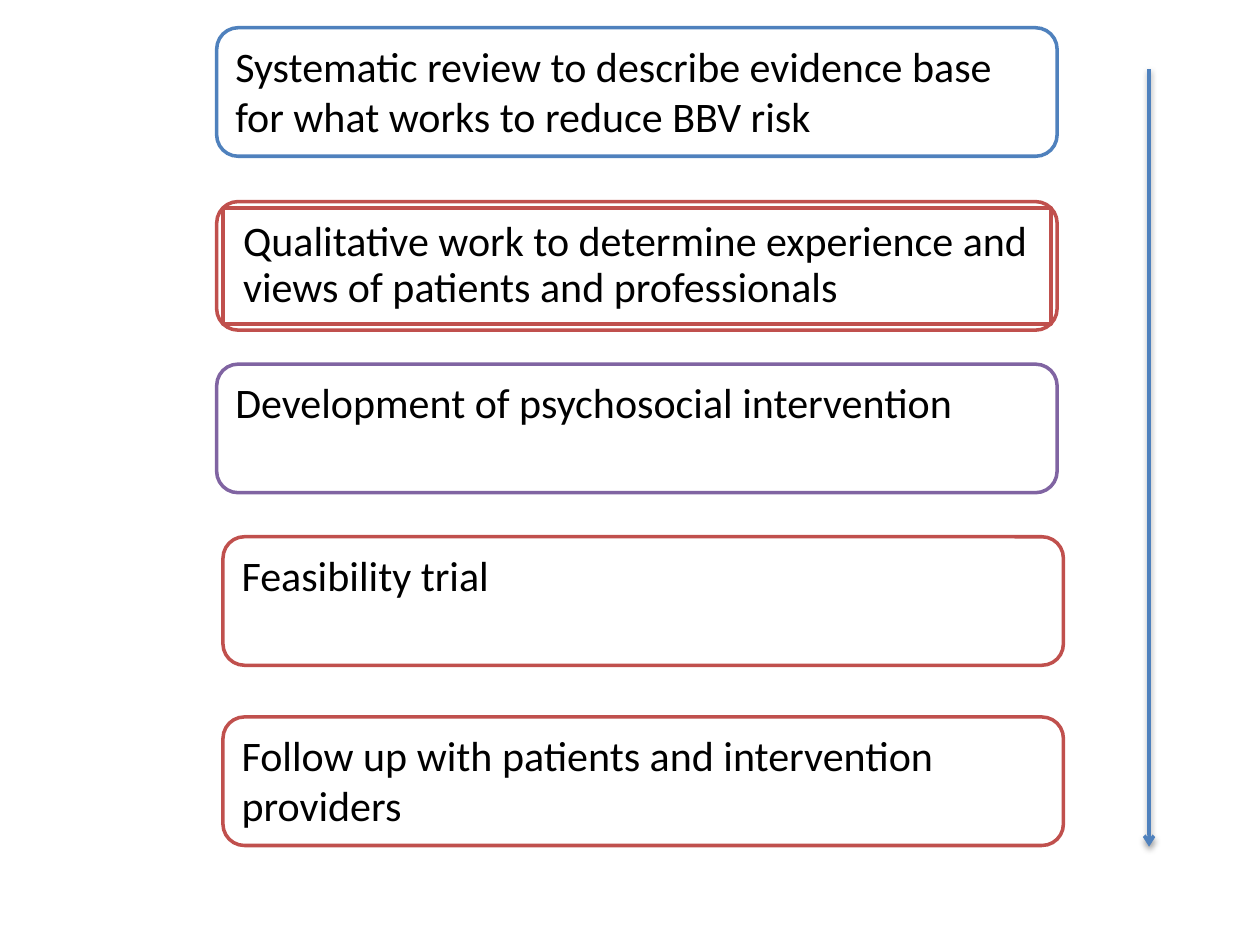
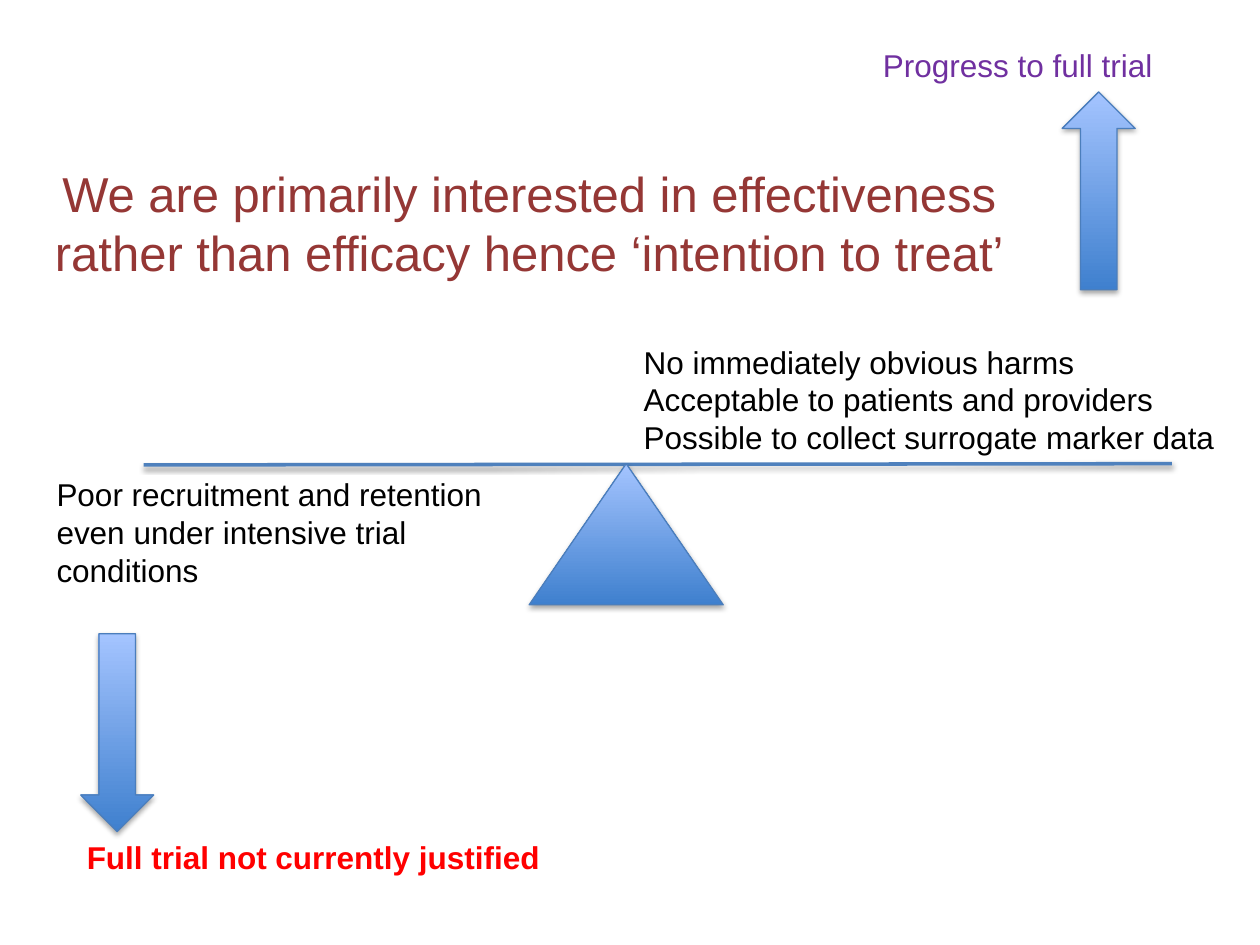
"""Build two slides: the study stages and the balance of trial outcomes."""
from lxml import etree
from pptx import Presentation
from pptx.dml.color import RGBColor
from pptx.enum.shapes import MSO_CONNECTOR as Connector, MSO_SHAPE as Shape
from pptx.enum.text import MSO_ANCHOR as Anchor, PP_ALIGN as Align
from pptx.oxml.ns import qn
from pptx.util import Inches, Pt

COLORS = {
    "blue": "4F81BD", "red": "C0504D", "purple": "8064A2", "white": "FFFFFF",
    "black": "000000", "edge": "4B7EBC", "deep": "3F80CE", "pale": "A4C4FF",
    "violet": "7030A0", "alert": "FF0000", "maroon": "953735",
}
STAGE_SIZE = (6.67, 1.02)
STAGES = [
    (1.72, 0.22, "blue", "Systematic review to describe evidence base for what works to reduce BBV risk"),
    (1.72, 1.6, "red", ""),
    (1.72, 2.89, "purple", "Development of psychosocial intervention"),
    (1.77, 4.26, "red", "Feasibility trial"),
    (1.77, 5.69, "red", "Follow up with patients and intervention providers"),
]
QUALITATIVE = "Qualitative work to determine experience and views of patients and professionals"
INNER_MARGIN = 0.05
TIMELINE = (9.12, 0.55, 9.12, 6.72)

HEADING = "We are primarily interested in effectiveness rather than efficacy hence ‘intention to treat’"
BEAM = (1.14, 3.69, 9.3, 3.68)
BALANCE_PARTS = [
    (Shape.DOWN_ARROW, (0.64, 5.03, 0.58, 1.57)),
    (Shape.UP_ARROW, (8.43, 0.73, 0.58, 1.57)),
    (Shape.ISOSCELES_TRIANGLE, (4.2, 3.68, 1.54, 1.12)),
]
LABELS = [
    ((6.91, 0.32, 2.74, 0.4), ["Progress to full trial"], {"color": "violet"}),
    ((0.59, 6.6, 4.81, 0.4), ["Full trial not currently justified"], {"color": "alert", "bold": True}),
    ((5.01, 2.67, 4.8, 1.31), ["No immediately obvious harms", "Acceptable to patients and providers",
                               "Possible to collect surrogate marker data"], {}),
    ((0.35, 3.72, 3.85, 1.31), ["Poor recruitment and retention",
                                "even under intensive trial conditions"], {}),
]


def rgb(name):
    return RGBColor.from_string(COLORS[name])


def write(box, lines, size=18, font="Arial", color="black", bold=False,
          align=Align.LEFT, anchor=Anchor.TOP, spacing=None, inset=None):
    frame = box.text_frame
    frame.word_wrap = True
    frame.vertical_anchor = anchor
    if inset is not None:
        frame.margin_left = frame.margin_right = Inches(inset)
        frame.margin_top = frame.margin_bottom = Inches(inset)
    for index, line in enumerate(lines):
        para = frame.add_paragraph() if index else frame.paragraphs[0]
        para.alignment = align
        para.line_spacing = spacing
        span = para.add_run()
        span.text = line
        span.font.size = Pt(size)
        span.font.name = font
        span.font.bold = bold
        span.font.color.rgb = rgb(color)


def outline(item, color, width):
    item.line.color.rgb = rgb(color)
    item.line.width = Pt(width)


def cast_shadow(item, distance, opacity):
    effects = etree.SubElement(item._element.spPr, qn("a:effectLst"))
    shadow = etree.SubElement(effects, qn("a:outerShdw"), blurRad=str(Pt(3.1)),
                              dist=str(Pt(distance)), dir="5400000", rotWithShape="0")
    tint = etree.SubElement(shadow, qn("a:srgbClr"), val=COLORS["black"])
    etree.SubElement(tint, qn("a:alpha"), val=str(opacity * 1000))


def add_line(page, ends):
    line = page.shapes.add_connector(Connector.STRAIGHT, *map(Inches, ends))
    outline(line, "blue", 2)
    cast_shadow(line, 1.6, 38)
    return line


def add_panel(page, kind, place, color):
    panel = page.shapes.add_shape(kind, *map(Inches, place))
    panel.fill.solid()
    panel.fill.fore_color.rgb = rgb("white")
    outline(panel, color, 2)
    panel.shadow.inherit = False
    return panel


def add_balance_part(page, kind, place):
    part = page.shapes.add_shape(kind, *map(Inches, place))
    part.fill.gradient()
    part.fill.gradient_angle = 90
    for stop, color in zip(part.fill.gradient_stops, ("deep", "pale")):
        stop.color.rgb = rgb(color)
    outline(part, "edge", 0.75)
    cast_shadow(part, 1.8, 35)


def build_stages(page):
    width, height = STAGE_SIZE
    for left, top, color, text in STAGES:
        panel = add_panel(page, Shape.ROUNDED_RECTANGLE, (left, top, width, height), color)
        if text:
            write(panel, [text], size=24, font="Calibri")
        else:
            place = (left + INNER_MARGIN, top + INNER_MARGIN,
                     width - 2 * INNER_MARGIN, height - 2 * INNER_MARGIN)
            inner = add_panel(page, Shape.RECTANGLE, place, color)
            write(inner, [QUALITATIVE], size=24, font="Calibri",
                  anchor=Anchor.MIDDLE, spacing=0.9, inset=0.16)
    timeline = add_line(page, TIMELINE)
    etree.SubElement(timeline.line._get_or_add_ln(), qn("a:tailEnd"), type="arrow")


def build_balance(page):
    title = page.shapes.title
    title.left, title.top, title.width, title.height = map(Inches, (0.11, 1.25, 8.18, 1.04))
    write(title, [HEADING], size=28, color="maroon", align=Align.CENTER)
    add_line(page, BEAM)
    for kind, place in BALANCE_PARTS:
        add_balance_part(page, kind, place)
    for place, lines, style in LABELS:
        write(page.shapes.add_textbox(*map(Inches, place)), lines, **style)


def main():
    deck = Presentation()
    deck.slide_width, deck.slide_height = Inches(10), Inches(7.5)
    build_stages(deck.slides.add_slide(deck.slide_layouts.get_by_name("Blank")))
    build_balance(deck.slides.add_slide(deck.slide_layouts.get_by_name("Title Only")))
    deck.save("out.pptx")


if __name__ == "__main__":
    main()
